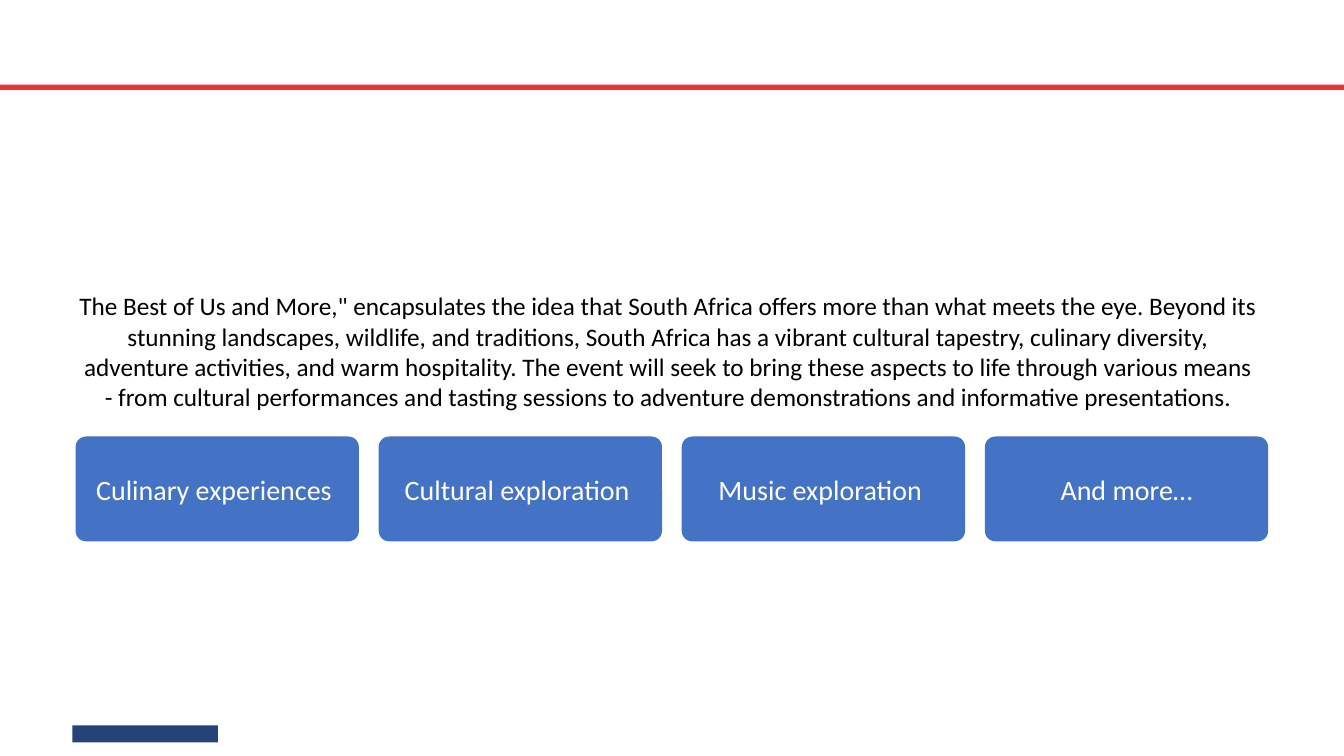
from pptx import Presentation
from pptx.dml.color import RGBColor
from pptx.enum.shapes import MSO_SHAPE as SHAPE
from pptx.enum.text import MSO_ANCHOR as ANCHOR, PP_ALIGN as ALIGN
from pptx.util import Pt

INTRO = (
    'The Best of Us and More," encapsulates the idea that South Africa offers more '
    "than what meets the eye. Beyond its stunning landscapes, wildlife, and traditions, "
    "South Africa has a vibrant cultural tapestry, culinary diversity, adventure "
    "activities, and warm hospitality. The event will seek to bring these aspects to "
    "life through various means - from cultural performances and tasting sessions to "
    "adventure demonstrations and informative presentations."
)
# The trailing spaces shift the centred labels slightly to the left.
THEMES = ["Culinary experiences ", "Cultural exploration ", "Music exploration ", "And more…"]


def add_block(kind, left, top, width, height, color):
    sp = s.shapes.add_shape(kind, Pt(left), Pt(top), Pt(width), Pt(height))
    sp.shadow.inherit = False
    sp.fill.solid()
    sp.fill.fore_color.rgb = RGBColor.from_string(color)
    sp.line.fill.background()
    return sp


def write_centred(sp, text, size, color, anchor):
    tf = sp.text_frame
    tf.word_wrap = True
    tf.vertical_anchor = anchor
    tf.margin_left = tf.margin_right = tf.margin_top = tf.margin_bottom = Pt(2.4)
    tf.text = text
    p = tf.paragraphs[0]
    p.alignment = ALIGN.CENTER
    font = p.runs[0].font
    font.name = "Calibri"
    font.size = Pt(size)
    font.color.rgb = RGBColor.from_string(color)


prs = Presentation()
prs.slide_width, prs.slide_height = Pt(960), Pt(540)
s = prs.slides.add_slide(prs.slide_layouts[6])

# Header rule and footer bar
add_block(SHAPE.RECTANGLE, 0, 60.5, 960, 3.8, "E83338")
add_block(SHAPE.RECTANGLE, 51.7, 518.2, 104, 12.2, "254379")

# Introduction
intro = s.shapes.add_textbox(Pt(54), Pt(205.2), Pt(846.7), Pt(87))
write_centred(intro, INTRO, 18, "000000", ANCHOR.TOP)

# Row of themes
for i, theme in enumerate(THEMES):
    card = add_block(SHAPE.ROUNDED_RECTANGLE, 54 + i * 216.5, 311.8, 202.4, 74.9, "4472C4")
    card.adjustments[0] = 0.1
    write_centred(card, theme, 20, "FFFFFF", ANCHOR.MIDDLE)

prs.save("out.pptx")
